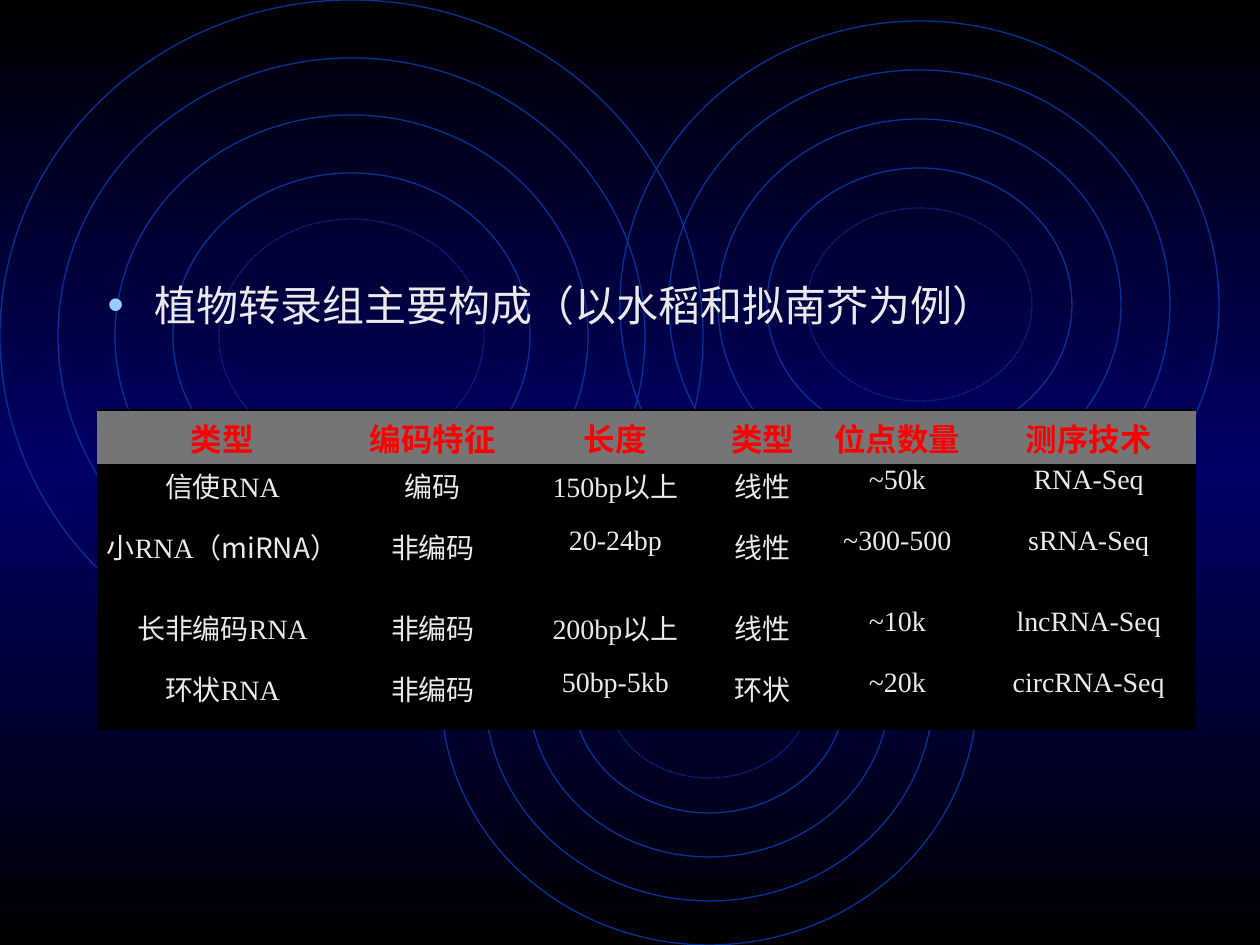
from copy import deepcopy

from lxml.etree import SubElement
from pptx import Presentation
from pptx.dml.color import RGBColor
from pptx.enum.dml import MSO_LINE
from pptx.enum.shapes import MSO_SHAPE
from pptx.enum.text import MSO_ANCHOR, PP_ALIGN
from pptx.oxml.ns import qn
from pptx.util import Pt

BLACK = RGBColor(0x00, 0x00, 0x00)
NAVY = RGBColor(0x00, 0x00, 0x66)
RING_BLUE = RGBColor(0x00, 0x33, 0x99)
BULLET_BLUE = RGBColor(0x99, 0xCC, 0xFF)
PALE = RGBColor(0xEA, 0xEA, 0xEA)
RED = RGBColor(0xFF, 0x00, 0x00)
GREY = RGBColor(0x75, 0x75, 0x75)

SERIF = "Times New Roman"
CHINESE = "Noto Sans CJK SC"
PLAIN_TABLE = "{2D5ABB26-0587-4C30-8999-92F81FD0307C}"
RING_INSETS = (0, 0.082, 0.164, 0.246, 0.312)

RING_SETS = [
    (0, 0, 703, 672),
    (441, 441, 536, 504),
    (620, 21, 599, 567),
]
COLUMNS = [251, 170, 195, 100, 169, 214]
ROWS = [55, 61, 81, 61, 61]
RNA_TYPES = [
    ["类型", "编码特征", "长度", "类型", "位点数量", "测序技术"],
    ["信使|RNA", "编码", "150bp|以上", "线性", "~50k", "RNA-Seq"],
    ["小|RNA|（miRNA）", "非编码", "20-24bp", "线性", "~300-500", "sRNA-Seq"],
    ["长非编码|RNA", "非编码", "200bp|以上", "线性", "~10k", "lncRNA-Seq"],
    ["环状|RNA", "非编码", "50bp-5kb", "环状", "~20k", "circRNA-Seq"],
]


def px(length):
    return round(length * 914400 / 126)


class SlideBuilder:
    def __init__(self, deck):
        self.page = deck.slides.add_slide(deck.slide_layouts[1])
        title = self.page.shapes.title.element
        title.getparent().remove(title)

    def background(self, colors):
        fill = self.page.background.fill
        fill.gradient()
        fill.gradient_angle = 90
        stop_list = next(self.page.element.iter(qn("a:gsLst")))
        stop_list.append(deepcopy(stop_list[0]))
        for index, (stop, color) in enumerate(zip(fill.gradient_stops, colors)):
            stop.color.rgb = color
            stop.position = index / (len(colors) - 1)

    def rings(self, left, top, width, height):
        group = self.page.shapes.add_group_shape()
        for ratio in RING_INSETS:
            inset = round(width * ratio)
            ring = group.shapes.add_shape(
                MSO_SHAPE.OVAL, px(left + inset), px(top + inset),
                px(width - 2 * inset), px(height - 2 * inset))
            ring.shadow.inherit = False
            ring.fill.background()
            ring.line.color.rgb = RING_BLUE
            ring.line.width = Pt(0.75)
        ring.line.dash_style = MSO_LINE.ROUND_DOT

    def span(self, para, text, font, size, color, bold=False):
        span = para.add_run()
        span.text = text
        span.font.name = font
        span.font.size = Pt(size)
        span.font.bold = bold
        span.font.color.rgb = color
        SubElement(span.font._element, qn("a:ea"), typeface=CHINESE)

    def body(self, left, top, width, height, text):
        box = self.page.placeholders[1]
        box.element.getparent().append(box.element)
        box.left, box.top = px(left), px(top)
        box.width, box.height = px(width), px(height)
        para = box.text_frame.paragraphs[0]
        para.space_before = Pt(5)
        properties = para._p.get_or_add_pPr()
        properties.set("marL", str(px(47)))
        properties.set("indent", str(px(-47)))
        color = SubElement(properties, qn("a:buClr"))
        SubElement(color, qn("a:srgbClr"), val=str(BULLET_BLUE))
        SubElement(properties, qn("a:buSzPct"), val="110000")
        SubElement(properties, qn("a:buChar"), char="•")
        self.span(para, text, SERIF, 24, PALE)

    def border(self, cell, side, width):
        line = SubElement(cell._tc.get_or_add_tcPr(), qn(side), w=str(Pt(width)))
        fill = SubElement(line, qn("a:solidFill"))
        SubElement(fill, qn("a:srgbClr"), val=str(BLACK))

    def cell(self, cell, text, header):
        cell.margin_left = cell.margin_right = px(9)
        cell.margin_top = cell.margin_bottom = 0
        cell.vertical_anchor = MSO_ANCHOR.MIDDLE if header else MSO_ANCHOR.TOP
        cell.fill.solid()
        cell.fill.fore_color.rgb = GREY if header else BLACK
        para = cell.text_frame.paragraphs[0]
        para.alignment = PP_ALIGN.CENTER
        for part in text.split("|"):
            font = SERIF if part.isascii() else CHINESE
            self.span(para, part, font, 18 if header else 16,
                      RED if header else PALE, header)

    def table(self, left, top, columns, rows, content):
        table = self.page.shapes.add_table(
            len(rows), len(columns), px(left), px(top),
            px(sum(columns)), px(sum(rows))).table
        table.horz_banding = False
        next(table._tbl.iter(qn("a:tableStyleId"))).text = PLAIN_TABLE
        for column, width in zip(table.columns, columns):
            column.width = px(width)
        last = len(rows) - 1
        edges = {0: [("a:lnT", 1.5), ("a:lnB", 1)],
                 1: [("a:lnT", 1)],
                 last: [("a:lnB", 1.5)]}
        for index, (row, height) in enumerate(zip(table.rows, rows)):
            row.height = px(height)
            for cell, text in zip(row.cells, content[index]):
                for side, width in edges.get(index, []):
                    self.border(cell, side, width)
                self.cell(cell, text, index == 0)


def main():
    deck = Presentation()
    deck.slide_width, deck.slide_height = px(1260), px(945)
    slide = SlideBuilder(deck)
    slide.background([BLACK, NAVY, BLACK])
    for ring_set in RING_SETS:
        slide.rings(*ring_set)
    slide.body(95, 273, 1071, 567, "植物转录组主要构成（以水稻和拟南芥为例）")
    slide.table(97, 410, COLUMNS, ROWS, RNA_TYPES)
    deck.save("out.pptx")


if __name__ == "__main__":
    main()
